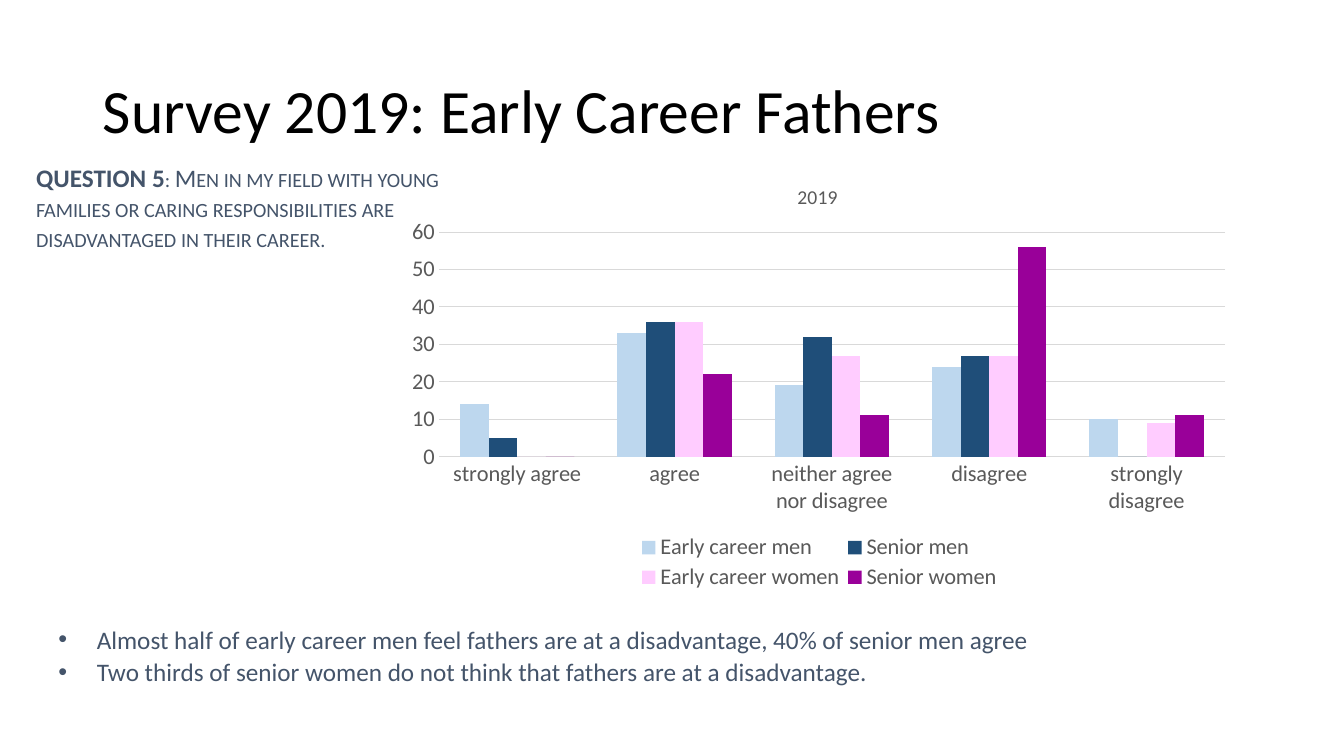
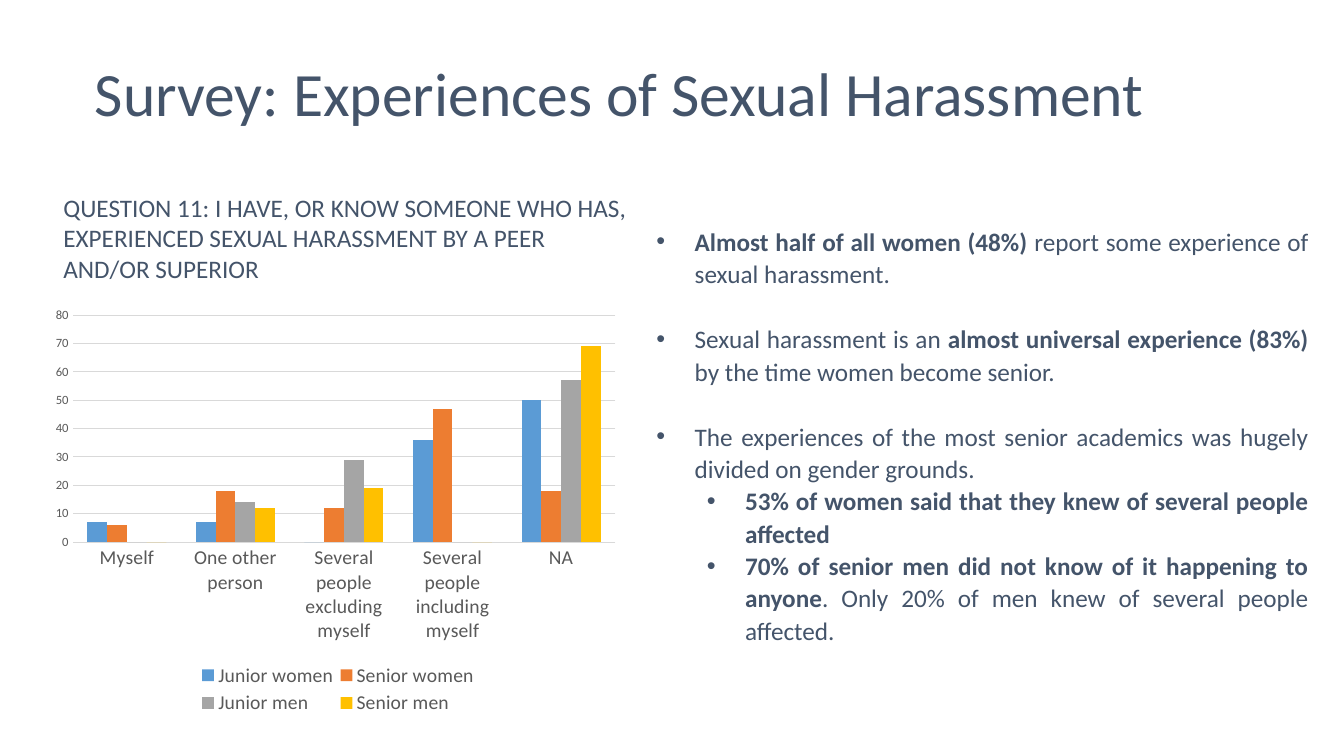
from lxml import etree
from pptx import Presentation
from pptx.chart.data import CategoryChartData
from pptx.dml.color import RGBColor
from pptx.enum.chart import XL_CHART_TYPE, XL_LEGEND_POSITION, XL_TICK_MARK
from pptx.enum.text import MSO_ANCHOR, MSO_AUTO_SIZE, PP_ALIGN
from pptx.oxml.ns import qn
from pptx.util import Inches, Pt

CLUSTERED = XL_CHART_TYPE.COLUMN_CLUSTERED
BOTTOM = XL_LEGEND_POSITION.BOTTOM
NO_TICK = XL_TICK_MARK.NONE
MIDDLE, TOP = MSO_ANCHOR.MIDDLE, MSO_ANCHOR.TOP
LEFT, JUSTIFY = PP_ALIGN.LEFT, PP_ALIGN.JUSTIFY
FIT_SHAPE, NO_FIT = MSO_AUTO_SIZE.SHAPE_TO_FIT_TEXT, MSO_AUTO_SIZE.NONE

FONT = "Calibri"
BLACK, SLATE, GREY, GRID = "000000", "44546A", "595959", "D9D9D9"
INDENT, LEVEL_STEP = 0.38, 0.5


def style(font, size, color, bold=None):
    font.name, font.size, font.bold = FONT, Pt(size), bold
    font.color.rgb = RGBColor.from_string(color)


def place(parent, index, **fractions):
    """Give a chart part a fixed place, in fractions of the chart area."""
    for old in parent.findall(qn("c:layout")):
        parent.remove(old)
    layout = etree.Element(qn("c:layout"))
    manual = etree.SubElement(layout, qn("c:manualLayout"))
    if parent.tag == qn("c:plotArea"):
        etree.SubElement(manual, qn("c:layoutTarget"), val="inner")
    for key in "xy":
        etree.SubElement(manual, qn(f"c:{key}Mode"), val="edge")
    for key, value in fractions.items():
        etree.SubElement(manual, qn(f"c:{key}"), val=str(value))
    parent.insert(index, layout)


# Bullets are (level, space before, [(text, bold), ...])
slides = [
    dict(
        title="Survey 2019: Early Career Fathers", title_color=BLACK,
        title_at=(0.92, 0.4, 11.5, 1.45),
        question=[("QUESTION 5", True, False),
                  (": Men in my field with young families or caring "
                   "responsibilities are disadvantaged in their career.", False, True)],
        question_at=(0.26, 1.56, 4.8, 1.01),
        chart_at=(3.93, 1.56, 8.39, 4.37), chart_title="2019",
        label_size=16, value_size=16, top_value=60,
        plot=dict(x=0.05, y=0.17, w=0.93, h=0.51),
        legend=dict(x=0.28, y=0.85, w=0.44, h=0.14),
        cats=["strongly agree", "agree", "neither agree nor disagree",
              "disagree", "strongly disagree"],
        series=[("Early career men", (14, 33, 19, 24, 10), "BDD7EE"),
                ("Senior men", (5, 36, 32, 27, 0), "1F4E79"),
                ("Early career women", (0, 36, 27, 27, 9), "FFCCFF"),
                ("Senior women", (0, 22, 11, 56, 11), "990099")],
        body_at=(0.48, 6.12, 12.48, 0.75), align=LEFT,
        bullets=[
            (0, 0, [("Almost half of early career men feel fathers are at a "
                     "disadvantage, 40% of senior men agree", False)]),
            (0, 0, [("Two thirds of senior women do not think that fathers are "
                     "at a disadvantage.", False)]),
        ],
    ),
    dict(
        title="Survey: Experiences of Sexual Harassment", title_color=SLATE,
        title_at=(0.84, 0.23, 11.5, 1.45),
        question=[("QUESTION 11: I HAVE, OR KNOW SOMEONE WHO HAS, EXPERIENCED "
                   "SEXUAL HARASSMENT BY A PEER AND/OR SUPERIOR", False, False)],
        question_at=(0.53, 1.86, 5.82, 1.01),
        chart_at=(0.43, 2.96, 5.79, 4.17), chart_title=None,
        label_size=14, value_size=9, top_value=80,
        plot=dict(x=0.05, y=0.04, w=0.93, h=0.54),
        legend=dict(x=0.26, y=0.86, w=0.49, h=0.14),
        cats=["Myself", "One other person", "Several people excluding myself",
              "Several people including myself", "NA"],
        series=[("Junior women", (7, 7, 0, 36, 50), "5B9BD5"),
                ("Senior women", (6, 18, 12, 47, 18), "ED7D31"),
                ("Junior men", (0, 14, 29, 0, 57), "A5A5A5"),
                ("Senior men", (0, 12, 19, 0, 69), "FFC000")],
        body_at=(6.41, 2.17, 6.67, 4.31), align=JUSTIFY,
        bullets=[
            (0, 0, [("Almost half of all women (48%)", True),
                    (" report some experience of sexual harassment.", False)]),
            (0, 23.5, [("Sexual harassment is an ", False),
                       ("almost universal experience (83%) ", True),
                       ("by the time women become senior.", False)]),
            (0, 23.5, [("The experiences of the most senior academics was hugely "
                        "divided on gender grounds.", False)]),
            (1, 0, [("53% of women said that they knew of several people "
                     "affected", True)]),
            (1, 0, [("70% of senior men did not know of it happening to anyone", True),
                    (". Only 20% of men knew of several people affected.", False)]),
        ],
    ),
]

prs = Presentation()
prs.slide_width, prs.slide_height = Inches(13.33), Inches(7.5)

for d in slides:
    s = prs.slides.add_slide(prs.slide_layouts[1])
    title, body = s.placeholders

    # Title
    title.left, title.top, title.width, title.height = map(Inches, d["title_at"])
    tf = title.text_frame
    tf.text = d["title"]
    tf.vertical_anchor, tf.auto_size = MIDDLE, NO_FIT
    p = tf.paragraphs[0]
    p.alignment, p.line_spacing = LEFT, 0.9
    style(p.runs[0].font, 44, d["title_color"])

    # Chart
    data = CategoryChartData()
    data.categories = d["cats"]
    for name, values, _ in d["series"]:
        data.add_series(name, values)
    chart = s.shapes.add_chart(CLUSTERED, *map(Inches, d["chart_at"]), data).chart
    style(chart.font, 10, BLACK)
    bars = chart.plots[0]
    bars.gap_width, bars.overlap, bars.vary_by_categories = 150, 0, False
    for series, (_, _, color) in zip(bars.series, d["series"]):
        series.format.fill.solid()
        series.format.fill.fore_color.rgb = RGBColor.from_string(color)

    # Axes
    for axis, size in ((chart.category_axis, d["label_size"]),
                       (chart.value_axis, d["value_size"])):
        axis.major_tick_mark = axis.minor_tick_mark = NO_TICK
        axis.format.line.fill.background()
        style(axis.tick_labels.font, size, GREY)
    axis = chart.value_axis
    axis.minimum_scale, axis.maximum_scale, axis.major_unit = 0, d["top_value"], 10
    grid = axis.major_gridlines.format.line
    grid.width = Pt(0.75)
    grid.color.rgb = RGBColor.from_string(GRID)

    # Legend, chart title and plot area
    chart.has_legend = True
    chart.legend.position = BOTTOM
    chart.legend.include_in_layout = False
    style(chart.legend.font, d["label_size"], GREY)
    place(chart.element.find(".//" + qn("c:legend")), 1, **d["legend"])
    place(chart.element.find(".//" + qn("c:plotArea")), 0, **d["plot"])
    chart.has_title = bool(d["chart_title"])
    if chart.has_title:
        tf = chart.chart_title.text_frame
        tf.text = d["chart_title"]
        style(tf.paragraphs[0].runs[0].font, 14, GREY, False)
        place(chart.element.find(".//" + qn("c:title")), 1, x=0.47, y=0.05)

    # Survey question
    tf = s.shapes.add_textbox(*map(Inches, d["question_at"])).text_frame
    tf.word_wrap, tf.auto_size = True, FIT_SHAPE
    for text, bold, small_caps in d["question"]:
        r = tf.paragraphs[0].add_run()
        r.text = text
        style(r.font, 18, SLATE, bold)
        if small_caps:
            r.font._element.set("cap", "small")

    # Findings
    body.left, body.top, body.width, body.height = map(Inches, d["body_at"])
    tf = body.text_frame
    tf.vertical_anchor, tf.auto_size = TOP, NO_FIT
    for i, (level, gap, runs) in enumerate(d["bullets"]):
        p = tf.add_paragraph() if i else tf.paragraphs[0]
        p.level, p.alignment, p.line_spacing = level, d["align"], 1.07
        p.space_before, p.space_after = Pt(gap), Pt(0)
        pPr = p._p.get_or_add_pPr()
        pPr.set("marL", str(Inches(INDENT + LEVEL_STEP * level)))
        pPr.set("indent", str(-Inches(INDENT)))
        etree.SubElement(pPr, qn("a:buFont"), typeface="Arial")
        etree.SubElement(pPr, qn("a:buChar"), char="•")
        for text, bold in runs:
            r = p.add_run()
            r.text = text
            style(r.font, 18, SLATE, bold)

prs.save("out.pptx")
